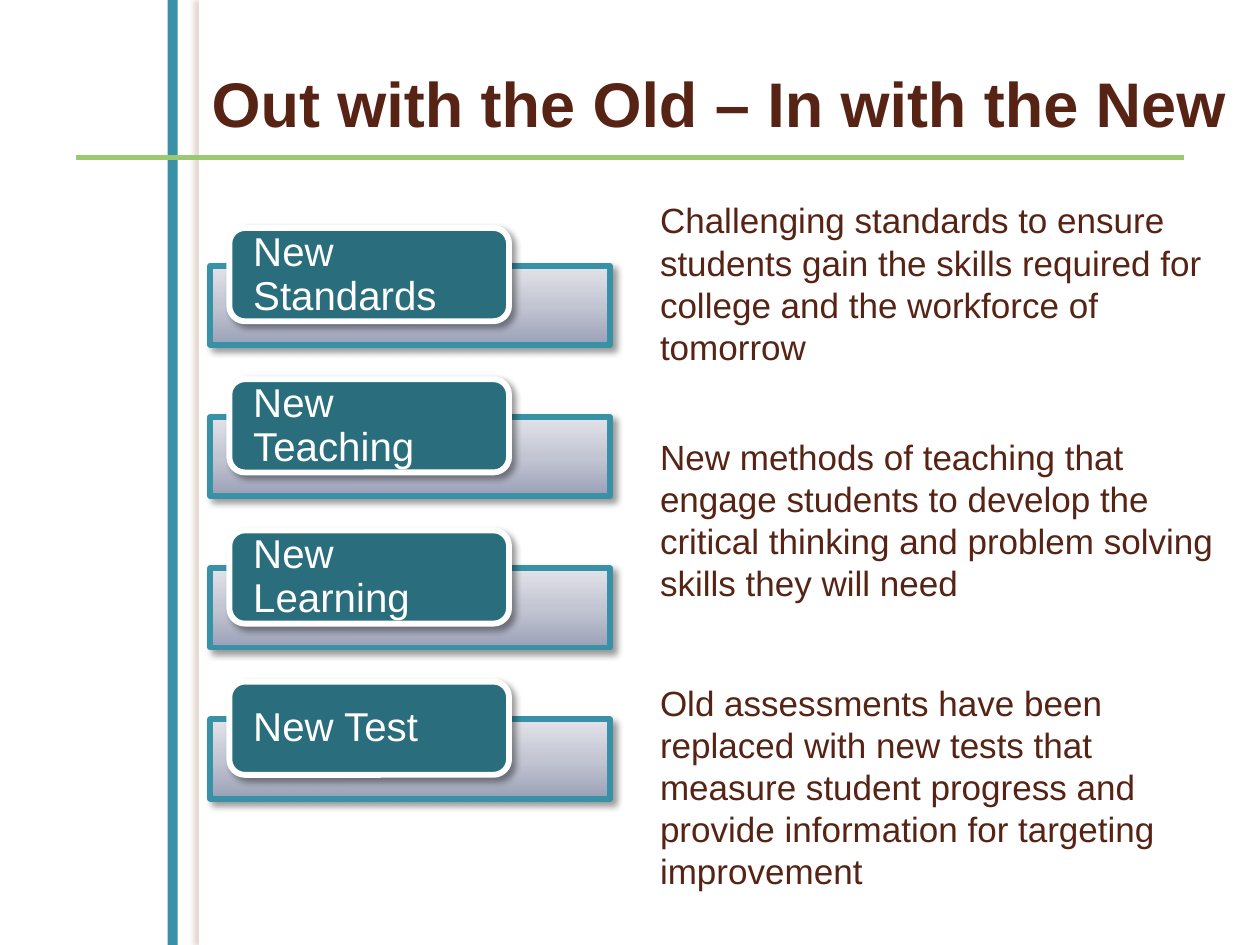
from copy import deepcopy
from dataclasses import dataclass

from lxml.etree import SubElement
from pptx import Presentation
from pptx.dml.color import RGBColor
from pptx.enum.shapes import MSO_CONNECTOR, MSO_SHAPE
from pptx.enum.text import MSO_ANCHOR, MSO_AUTO_SIZE, PP_ALIGN
from pptx.oxml.ns import qn
from pptx.util import Inches, Pt

TITLE = "Out with the Old – In with the New"
BADGES = ["New Standards", "New Teaching", "New Learning", "New Test"]
# Top, height and wording of each explanation
NOTES = [
    (1.53, 1.45, "Challenging standards to ensure students gain the skills "
                 "required for college and the workforce of tomorrow"),
    (3.41, 1.45, "New methods of teaching that engage students to develop the "
                 "critical thinking and problem solving skills they will need"),
    (5.36, 1.78, "Old assessments have been replaced with new tests that "
                 "measure student progress and provide information for "
                 "targeting improvement"),
]


@dataclass(frozen=True)
class Theme:
    font: str = "Arial"
    brown: str = "572314"
    teal: str = "3891A7"
    dark_teal: str = "2A6D7D"
    green: str = "9BC872"
    white: str = "FFFFFF"
    plate: tuple = ("9AA0B7", "C3C6D2", "E2E3E9")
    badge_shadow: tuple = ("000000", 40, 4, 3, 45)
    bar_shadow: tuple = ("83471F", 25, 3, 3, 180)
    title_size: int = 36
    badge_size: int = 23
    note_size: int = 20
    stroke: float = 3.35


THEME = Theme()
WIDTH, HEIGHT = 10, 7.5
BADGE_TOP, BADGE_PITCH = 1.81, 1.2
NOTE_LEFT, NOTE_WIDTH = 5.14, 4.77


def rgb(code):
    return RGBColor.from_string(code)


def inches(*lengths):
    return [Inches(length) for length in lengths]


def add_shadow(shape, color, opacity, blur, distance, angle):
    effects = SubElement(shape._element.spPr, qn("a:effectLst"))
    outer = SubElement(effects, qn("a:outerShdw"), blurRad=str(Pt(blur)),
                       dist=str(Pt(distance)), dir=str(angle * 60000),
                       algn="tl", rotWithShape="0")
    tint = SubElement(outer, qn("a:srgbClr"), val=color)
    SubElement(tint, qn("a:alpha"), val=str(opacity * 1000))


def add_block(shapes, kind, area, fill=None, line=None, shadow=None):
    block = shapes.add_shape(kind, *inches(*area))
    if fill:
        block.fill.solid()
        block.fill.fore_color.rgb = rgb(fill)
    if line:
        block.line.color.rgb = rgb(line)
        block.line.width = Pt(THEME.stroke)
    else:
        block.line.fill.background()
    if shadow:
        add_shadow(block, *shadow)
    else:
        block.shadow.inherit = False
    return block


def fill_gradient(shape, colors):
    """Spread three colours evenly from the bottom of the shape to its top."""
    shape.fill.gradient()
    shape.fill.gradient_angle = 90
    first = shape.fill.gradient_stops[0]._gs
    first.addnext(deepcopy(first))
    for index, (stop, color) in enumerate(zip(shape.fill.gradient_stops, colors)):
        stop.position = index / (len(colors) - 1)
        stop.color.rgb = rgb(color)


def write(box, text, size, color, bold=False, anchor=MSO_ANCHOR.TOP,
          margins=(0.1, 0.05), spacing=None, after=None):
    frame = box.text_frame
    frame.word_wrap = True
    frame.vertical_anchor = anchor
    frame.margin_left = frame.margin_right = Inches(margins[0])
    frame.margin_top = frame.margin_bottom = Inches(margins[1])
    para = frame.paragraphs[0]
    para.alignment = PP_ALIGN.LEFT
    para.line_spacing = spacing
    para.space_after = after
    span = para.add_run()
    span.text = text
    span.font.name = THEME.font
    span.font.size = Pt(size)
    span.font.bold = bold
    span.font.color.rgb = rgb(color)
    return frame


def add_badge(slide, text, top):
    shapes = slide.shapes.add_group_shape().shapes
    plate = add_block(shapes, MSO_SHAPE.RECTANGLE, (1.67, top + 0.3, 3.17, 0.63),
                      line=THEME.teal, shadow=THEME.badge_shadow)
    fill_gradient(plate, THEME.plate)
    add_block(shapes, MSO_SHAPE.ROUNDED_RECTANGLE, (1.82, top, 2.22, 0.74),
              fill=THEME.dark_teal, line=THEME.white, shadow=THEME.badge_shadow)
    label = shapes.add_textbox(*inches(1.83, top + 0.04, 2.18, 0.67))
    write(label, text, THEME.badge_size, THEME.white, anchor=MSO_ANCHOR.MIDDLE,
          margins=(0.18, 0), spacing=0.9, after=Pt(0.35 * THEME.badge_size))


def add_frame(slide):
    add_block(slide.shapes, MSO_SHAPE.RECTANGLE, (1.58, 0, 0.05, HEIGHT),
              fill=THEME.white, shadow=THEME.bar_shadow)
    add_block(slide.shapes, MSO_SHAPE.RECTANGLE, (1.33, 0, 0.08, HEIGHT),
              fill=THEME.teal)
    rule = slide.shapes.add_connector(
        MSO_CONNECTOR.STRAIGHT,
        *inches(0.06 * WIDTH, HEIGHT / 6, 0.94 * WIDTH, HEIGHT / 6))
    rule.line.color.rgb = rgb(THEME.green)
    rule.line.width = Pt(THEME.stroke)
    SubElement(rule._element.spPr, qn("a:effectLst"))


def main():
    deck = Presentation()
    deck.slide_width, deck.slide_height = inches(WIDTH, HEIGHT)
    slide = deck.slides.add_slide(deck.slide_layouts[5])
    add_frame(slide)

    title = slide.shapes.title
    title.left, title.top, title.width, title.height = inches(1.58, 0.5, 8.33, 0.62)
    frame = write(title, TITLE, THEME.title_size, THEME.brown, bold=True,
                  anchor=MSO_ANCHOR.MIDDLE)
    frame.auto_size = MSO_AUTO_SIZE.NONE

    for row, text in enumerate(BADGES):
        add_badge(slide, text, BADGE_TOP + row * BADGE_PITCH)
    for top, height, text in NOTES:
        note = slide.shapes.add_textbox(*inches(NOTE_LEFT, top, NOTE_WIDTH, height))
        frame = write(note, text, THEME.note_size, THEME.brown)
        frame.auto_size = MSO_AUTO_SIZE.SHAPE_TO_FIT_TEXT

    deck.save("out.pptx")


if __name__ == "__main__":
    main()
